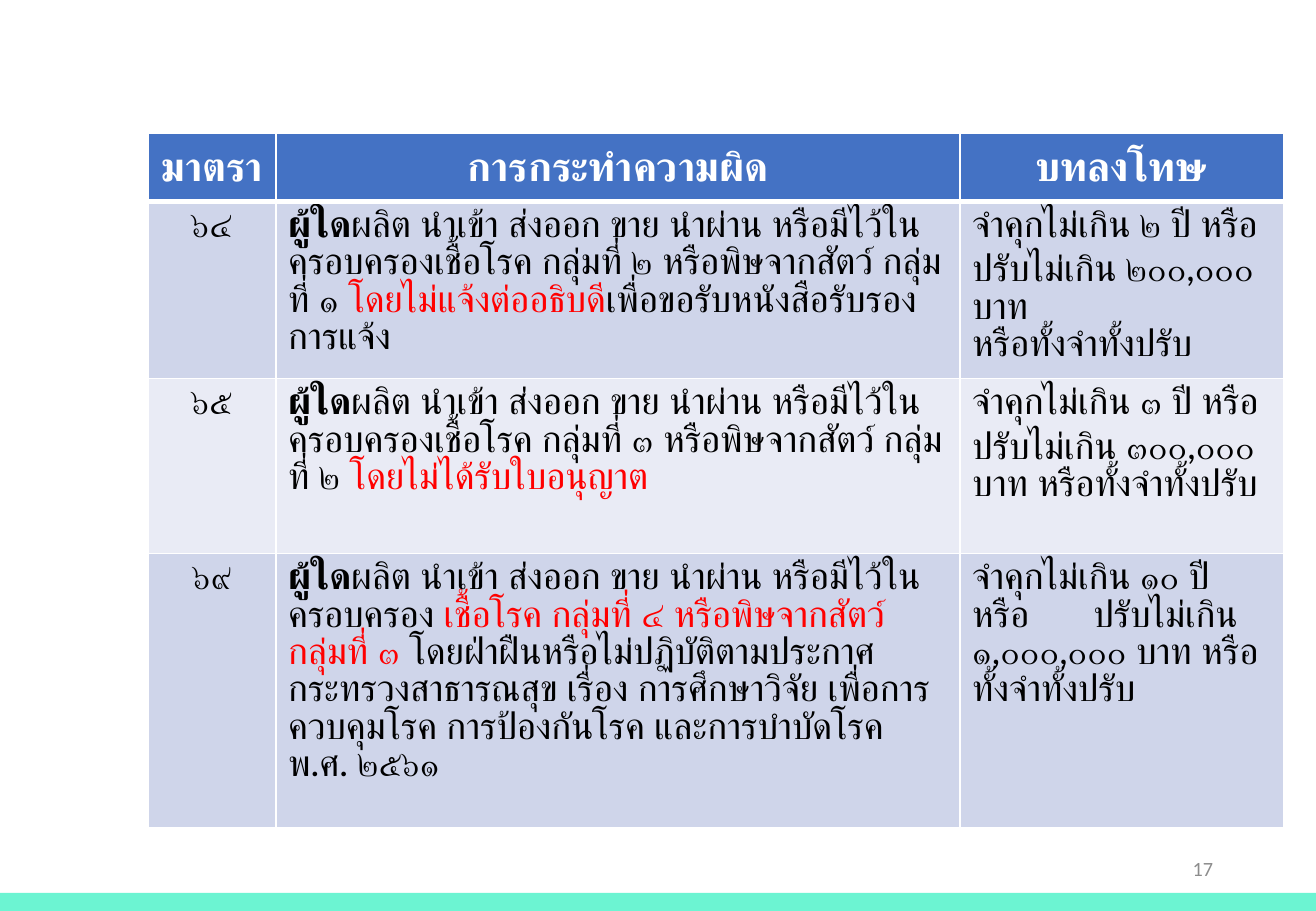
from pptx import Presentation
from pptx.dml.color import RGBColor
from pptx.enum.shapes import MSO_SHAPE as Shape
from pptx.enum.text import MSO_ANCHOR as Anchor, PP_ALIGN as Align
from pptx.oxml.ns import qn
from pptx.util import Cm, Pt
from lxml.etree import SubElement


def paint(target, colour):
    if hasattr(target, "solid"):
        target.solid()
        target = target.fore_color
    target.rgb = RGBColor.from_string(colour)


def add_span(para, text, font, size, colour, bold=False):
    span = para.add_run()
    span.text = text
    span.font.size = Pt(size)
    span.font.bold = bold
    paint(span.font.fill, colour)
    span.font.name = font
    SubElement(span.font._element, qn("a:cs"), typeface=font)


BLACK, RED, WHITE = "000000", "FF0000", "FFFFFF"
HEADER_BLUE, BAND_DARK, BAND_LIGHT = "4472C4", "CFD5EA", "E9EBF5"
COLUMN_WIDTHS = [2.67, 14.3, 6.76]
ROW_HEIGHTS = [1.42, 3.71, 3.66, 5.72]
LINE_SPACING = 0.84
HEADINGS = ["มาตรา", "การกระทำความผิด", "บทลงโทษ"]
WHOEVER = "ผู้ใด"
ACTS = "ผลิต นําเข้า ส่งออก ขาย นําผ่าน หรือมีไว้ในครอบครอง"
SECTIONS = [
    (
        "๖๔",
        [
            (ACTS + "เชื้อโรค กลุ่มที่ ๒ หรือพิษจากสัตว์ กลุ่มที่ ๑ ", BLACK),
            ("โดยไม่แจ้งต่ออธิบดี", RED),
            ("เพื่อขอรับหนังสือรับรองการแจ้ง", BLACK),
        ],
        ["จําคุกไม่เกิน ๒ ปี หรือ", "ปรับไม่เกิน ๒๐๐,๐๐๐ บาท", "หรือทั้งจําทั้งปรับ"],
    ),
    (
        "๖๕",
        [
            (ACTS + "เชื้อโรค กลุ่มที่ ๓ หรือพิษจากสัตว์ กลุ่มที่ ๒ ", BLACK),
            ("โดยไม่ได้รับใบอนุญาต", RED),
        ],
        ["จําคุกไม่เกิน ๓ ปี หรือ", "ปรับไม่เกิน ๓๐๐,๐๐๐ บาท หรือทั้งจําทั้งปรับ"],
    ),
    (
        "๖๙",
        [
            (ACTS + " ", BLACK),
            ("เชื้อโรค กลุ่มที่ ๔ หรือพิษจากสัตว์ กลุ่มที่ ๓ ", RED),
            (
                "โดยฝ่าฝืนหรือไม่ปฏิบัติตามประกาศกระทรวงสาธารณสุข เรื่อง "
                "การศึกษาวิจัย เพื่อการควบคุมโรค การป้องกันโรค "
                "และการบําบัดโรค พ.ศ. ๒๕๖๑",
                BLACK,
            ),
        ],
        ["จําคุกไม่เกิน ๑๐ ปี หรือ\tปรับไม่เกิน ๑,๐๐๐,๐๐๐ บาท หรือทั้งจําทั้งปรับ"],
    ),
]

deck = Presentation()
deck.slide_width, deck.slide_height = Cm(27.51), Cm(19.05)
page = deck.slides.add_slide(deck.slide_layouts[6])

footer_bar = page.shapes.add_shape(Shape.RECTANGLE, 0, Cm(18.67), deck.slide_width, Cm(0.38))
footer_bar.shadow.inherit = False
paint(footer_bar.fill, "6CF4D2")
footer_bar.line.fill.background()

table = page.shapes.add_table(
    len(ROW_HEIGHTS), len(COLUMN_WIDTHS), Cm(3.1), Cm(2.79),
    Cm(sum(COLUMN_WIDTHS)), Cm(sum(ROW_HEIGHTS)),
).table
for column, width in zip(table.columns, COLUMN_WIDTHS):
    column.width = Cm(width)
for row_number, (row, height) in enumerate(zip(table.rows, ROW_HEIGHTS)):
    row.height = Cm(height)
    thick_edge = {0: "a:lnB", 1: "a:lnT"}.get(row_number)
    for cell in row.cells:
        for edge in ("a:lnL", "a:lnR", "a:lnT", "a:lnB"):
            width = Pt(3 if edge == thick_edge else 1)
            line = SubElement(cell._tc.get_or_add_tcPr(), qn(edge), w=str(width))
            SubElement(SubElement(line, qn("a:solidFill")), qn("a:srgbClr"), val=WHITE)

for cell, heading in zip(table.rows[0].cells, HEADINGS):
    paint(cell.fill, HEADER_BLUE)
    cell.vertical_anchor = Anchor.MIDDLE
    cell.margin_left = cell.margin_right = Cm(0.18)
    cell.margin_top = cell.margin_bottom = 0
    para = cell.text_frame.paragraphs[0]
    para.alignment = Align.CENTER
    add_span(para, heading, "Times New Roman", 24, WHITE, True)

for number, (section, offence, penalty) in enumerate(SECTIONS, 1):
    cells = table.rows[number].cells
    for cell in cells:
        paint(cell.fill, BAND_DARK if number % 2 else BAND_LIGHT)
        cell.text_frame.paragraphs[0].line_spacing = LINE_SPACING
    section_frame, offence_frame, penalty_frame = [cell.text_frame for cell in cells]

    para = section_frame.paragraphs[0]
    para.alignment = Align.CENTER
    add_span(para, section, "Lato", 22, BLACK)

    para = offence_frame.paragraphs[0]
    add_span(para, WHOEVER, "Lato", 22, BLACK, True)
    for text, colour in offence:
        add_span(para, text, "Lato", 22, colour)

    for index, text in enumerate(penalty):
        para = penalty_frame.add_paragraph() if index else penalty_frame.paragraphs[0]
        para.line_spacing = LINE_SPACING
        if index == 1:
            para.space_before = Pt(4.2)
        if "\t" in text:
            tabs = SubElement(para._p.get_or_add_pPr(), qn("a:tabLst"))
            SubElement(tabs, qn("a:tab"), pos=str(Cm(2.53)), algn="l")
        add_span(para, text, "Lato", 22, BLACK)

number_box = page.shapes.add_textbox(Cm(19.41), Cm(17.65), Cm(6.2), Cm(1.02))
number_box.text_frame.word_wrap = True
number_box.text_frame.vertical_anchor = Anchor.MIDDLE
para = number_box.text_frame.paragraphs[0]
para.alignment = Align.RIGHT
add_span(para, "17", "Calibri", 12, "8C8C8C")

deck.save("out.pptx")
